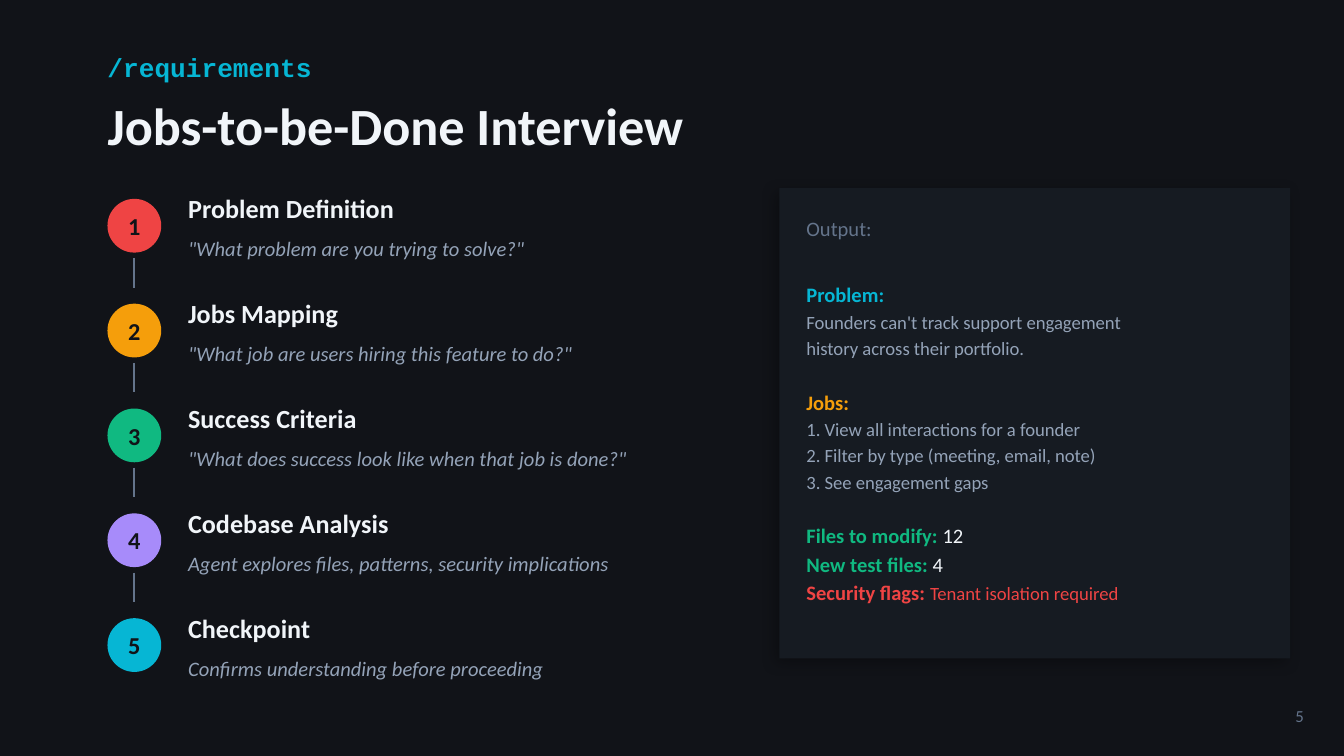
from dataclasses import dataclass

import lxml.etree
import pptx
import pptx.dml.color
import pptx.enum.shapes
import pptx.enum.text
import pptx.oxml
import pptx.oxml.ns
import pptx.util

Pt = pptx.util.Pt
Align = pptx.enum.text.PP_ALIGN
Shape = pptx.enum.shapes.MSO_SHAPE

COLORS = {
    "background": "111318", "panel": "161B22", "white": "F1F5F9",
    "muted": "94A3B8", "gray": "64748B", "cyan": "06B6D4", "amber": "F59E0B",
    "green": "10B981", "red": "EF4444", "violet": "A78BFA",
}
LEFT = 57.6
STEP_TOP = 100.8
STEP_PITCH = 56.16
CIRCLE = 28.8
PANEL_LEFT = 417.6
TEXT_LEFT = 432
LINE_GAP = 2
SECTION_GAP = 16.2


@dataclass
class Step:
    title: str
    detail: str
    color: str


@dataclass
class Span:
    text: str
    color: str
    size: float = 11
    bold: bool = False


@dataclass
class OutputLine:
    spans: list[Span]
    gap: float = LINE_GAP


STEPS = [
    Step("Problem Definition", '"What problem are you trying to solve?"', "red"),
    Step("Jobs Mapping", '"What job are users hiring this feature to do?"', "amber"),
    Step("Success Criteria", '"What does success look like when that job is done?"', "green"),
    Step("Codebase Analysis", "Agent explores files, patterns, security implications", "violet"),
    Step("Checkpoint", "Confirms understanding before proceeding", "cyan"),
]


def heading(text: str, color: str) -> OutputLine:
    return OutputLine([Span(text, color, bold=True)])


def body(text: str, gap: float = LINE_GAP) -> OutputLine:
    return OutputLine([Span(text, "muted", 10)], gap)


def summary(label: str, label_color: str, value: Span) -> OutputLine:
    return OutputLine([Span(label, label_color, bold=True), value])


OUTPUT = [
    heading("Problem:", "cyan"),
    body("Founders can't track support engagement"),
    body("history across their portfolio.", SECTION_GAP),
    heading("Jobs:", "amber"),
    body("1. View all interactions for a founder"),
    body("2. Filter by type (meeting, email, note)"),
    body("3. See engagement gaps", SECTION_GAP),
    summary("Files to modify: ", "green", Span("12", "white")),
    summary("New test files: ", "green", Span("4", "white")),
    summary("Security flags: ", "red", Span("Tenant isolation required", "red", 10)),
]


def rgb(name: str) -> pptx.dml.color.RGBColor:
    return pptx.dml.color.RGBColor.from_string(COLORS[name])


def prepare_frame(shape, inset: float = 0) -> None:
    frame = shape.text_frame
    frame.word_wrap = True
    frame.auto_size = pptx.enum.text.MSO_AUTO_SIZE.NONE
    frame.vertical_anchor = pptx.enum.text.MSO_ANCHOR.MIDDLE
    frame.margin_left = frame.margin_right = Pt(inset)
    frame.margin_top = frame.margin_bottom = Pt(inset / 2)


def write_text(paragraph, text: str, *, size: float, color: str,
               font: str = "Calibri", bold: bool = False,
               italic: bool = False, align=Align.LEFT) -> None:
    paragraph.alignment = align
    run = paragraph.add_run()
    run.text = text
    run.font.name = font
    run.font.size = Pt(size)
    run.font.bold = bold
    run.font.italic = italic
    run.font.color.rgb = rgb(color)


def add_box(slide, left: float, top: float, width: float, height: float,
            inset: float = 0):
    shape = slide.shapes.add_textbox(Pt(left), Pt(top), Pt(width), Pt(height))
    prepare_frame(shape, inset)
    return shape


def add_label(slide, left: float, top: float, width: float, height: float,
              text: str, *, inset: float = 0, **style) -> None:
    shape = add_box(slide, left, top, width, height, inset)
    write_text(shape.text_frame.paragraphs[0], text, **style)


def add_filled(slide, kind, left: float, top: float, width: float,
               height: float, color: str):
    shape = slide.shapes.add_shape(kind, Pt(left), Pt(top), Pt(width), Pt(height))
    shape.shadow.inherit = False
    shape.fill.solid()
    shape.fill.fore_color.rgb = rgb(color)
    shape.line.fill.background()
    return shape


def add_step(slide, number: int, step: Step, top: float) -> None:
    circle = add_filled(slide, Shape.OVAL, LEFT, top + 5.76, CIRCLE, CIRCLE, step.color)
    prepare_frame(circle)
    write_text(circle.text_frame.paragraphs[0], str(number), size=13,
               color="background", bold=True, align=Align.CENTER)
    add_label(slide, 100.8, top, 180, 21.6, step.title, size=14, color="white", bold=True)
    add_label(slide, 100.8, top + 21.6, 288, 21.6, step.detail, size=11,
              color="muted", italic=True)


def add_link(slide, top: float) -> None:
    center = LEFT + CIRCLE / 2
    line = slide.shapes.add_connector(
        pptx.enum.shapes.MSO_CONNECTOR.STRAIGHT,
        Pt(center), Pt(top + 37.44), Pt(center), Pt(top + 53.28))
    line.line.color.rgb = rgb("gray")
    line.line.width = Pt(1)
    lxml.etree.SubElement(line._element.spPr, pptx.oxml.ns.qn("a:effectLst"))


def add_panel(slide) -> None:
    panel = add_filled(slide, Shape.RECTANGLE, PANEL_LEFT, STEP_TOP, 273.6, 252, "panel")
    effects = panel._element.spPr.find(pptx.oxml.ns.qn("a:effectLst"))
    effects.append(pptx.oxml.parse_xml(
        f'<a:outerShdw {pptx.oxml.ns.nsdecls("a")} blurRad="{Pt(8)}" dist="{Pt(3)}" '
        'dir="8100000" algn="bl" rotWithShape="0"><a:srgbClr val="000000">'
        '<a:alpha val="30000"/></a:srgbClr></a:outerShdw>'))
    add_label(slide, TEXT_LEFT, 111.6, 244.8, 21.6, "Output:", size=11, color="gray")
    frame = add_box(slide, TEXT_LEFT, 136.8, 244.8, 201.6).text_frame
    for index, line in enumerate(OUTPUT):
        paragraph = frame.add_paragraph() if index else frame.paragraphs[0]
        paragraph.space_after = Pt(line.gap)
        for span in line.spans:
            write_text(paragraph, span.text, size=span.size, color=span.color, bold=span.bold)


def main() -> None:
    presentation = pptx.Presentation()
    presentation.slide_width, presentation.slide_height = Pt(720), Pt(405)
    slide = presentation.slides.add_slide(presentation.slide_layouts[5])
    slide.background.fill.solid()
    slide.background.fill.fore_color.rgb = rgb("background")

    title = slide.shapes.title
    title.left, title.top, title.width, title.height = Pt(LEFT), Pt(46.8), Pt(576), Pt(39.6)
    prepare_frame(title)
    write_text(title.text_frame.paragraphs[0], "Jobs-to-be-Done Interview",
               size=28, color="white", bold=True)
    add_label(slide, LEFT, 21.6, 288, 28.8, "/requirements", size=14,
              color="cyan", font="Courier New", bold=True)
    add_label(slide, 669.6, 370.8, 36, 25.2, "5", inset=7.2, size=9,
              color="gray", align=Align.RIGHT)

    for index, step in enumerate(STEPS):
        top = STEP_TOP + index * STEP_PITCH
        add_step(slide, index + 1, step, top)
        if index < len(STEPS) - 1:
            add_link(slide, top)
    add_panel(slide)
    presentation.save("out.pptx")


if __name__ == "__main__":
    main()
